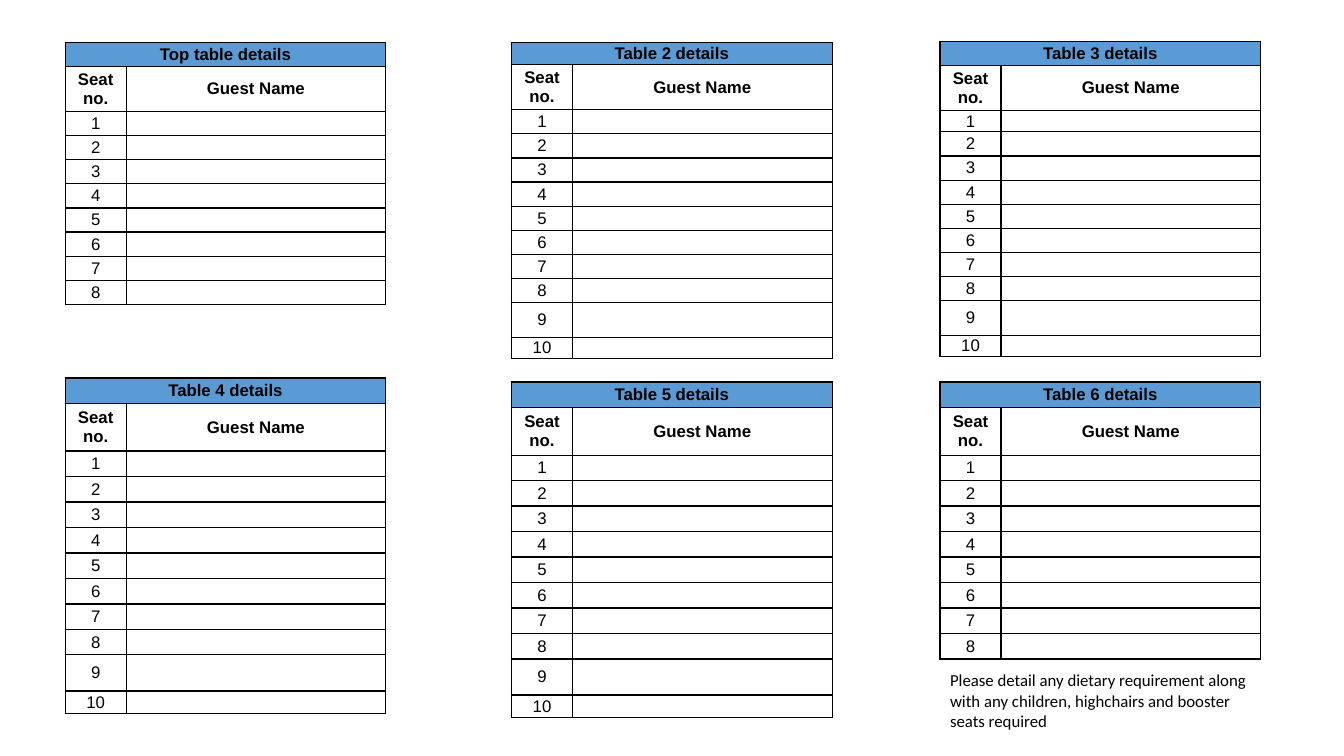
"""Build a wedding seating plan slide with six guest tables."""
from dataclasses import dataclass, replace

from lxml import etree
from pptx import Presentation
from pptx.dml.color import RGBColor
from pptx.enum import text as text_enum
from pptx.oxml import ns
from pptx.shapes.shapetree import SlideShapes
from pptx.table import _Cell
from pptx.text.text import TextFrame
from pptx.util import Pt


@dataclass(frozen=True)
class Theme:
    ink: str = "000000"
    title_fill: str = "5B9BD5"
    table_font: str = "Arial"
    note_font: str = "Calibri"
    size: float = 12
    border: float = 1


@dataclass(frozen=True)
class RowHeights:
    title: float
    header: float
    first: float
    seat: float
    ninth: float
    tenth: float

    def for_seats(self, seats: int) -> list[float]:
        seat_rows = [self.first, *[self.seat] * 7, self.ninth, self.tenth]
        return [self.title, self.header, *seat_rows[:seats]]


@dataclass(frozen=True)
class GuestTable:
    title: str
    left: float
    top: float
    seats: int
    heights: RowHeights


THEME = Theme()
COLUMN_WIDTHS = (43.5, 185.5)
LEFT, MIDDLE, RIGHT = 46.6, 365.4, 671.5
UPPER = RowHeights(17.25, 32.2, 17.25, 17.25, 24.7, 15.3)
LOWER = RowHeights(18.2, 34, 18.2, 18.2, 25.8, 16.1)
GUEST_TABLES = (
    GuestTable("Top table details", LEFT, 30.2, 8, UPPER),
    GuestTable("Table 4 details", LEFT, 270, 10, LOWER),
    GuestTable("Table 5 details", MIDDLE, 272.9, 10, LOWER),
    GuestTable("Table 2 details", MIDDLE, 30.2, 10, replace(UPPER, title=16)),
    GuestTable("Table 6 details", RIGHT, 272.9, 8, LOWER),
    GuestTable("Table 3 details", RIGHT, 29.5, 10, replace(UPPER, first=15.3)),
)
NOTE = ("Please detail any dietary requirement along with any children, "
        "highchairs and booster seats required")


def write_text(frame: TextFrame, content: str, *, font: str, bold: bool = False,
               align: text_enum.PP_ALIGN = text_enum.PP_ALIGN.LEFT) -> None:
    paragraph = frame.paragraphs[0]
    paragraph.alignment = align
    if not content:
        end = etree.SubElement(paragraph._p, ns.qn("a:endParaRPr"))
        end.set("sz", str(int(THEME.size * 100)))
        return
    run = paragraph.add_run()
    run.text = content
    run.font.name = font
    run.font.size = Pt(THEME.size)
    run.font.bold = bold
    run.font.color.rgb = RGBColor.from_string(THEME.ink)


def draw_borders(cell: _Cell) -> None:
    properties = cell._tc.get_or_add_tcPr()
    for side in ("lnL", "lnR", "lnT", "lnB"):
        line = etree.SubElement(properties, ns.qn(f"a:{side}"), w=str(Pt(THEME.border)))
        fill = etree.SubElement(line, ns.qn("a:solidFill"))
        etree.SubElement(fill, ns.qn("a:srgbClr"), val=THEME.ink)


def format_cell(cell: _Cell, content: str, *, bold: bool, fill: str | None) -> None:
    cell.margin_left = cell.margin_right = cell.margin_top = cell.margin_bottom = Pt(0)
    cell.vertical_anchor = text_enum.MSO_ANCHOR.MIDDLE
    draw_borders(cell)
    if fill:
        cell.fill.solid()
        cell.fill.fore_color.rgb = RGBColor.from_string(fill)
    else:
        cell.fill.background()
    write_text(cell.text_frame, content, font=THEME.table_font, bold=bold,
               align=text_enum.PP_ALIGN.CENTER)


def draw_guest_table(shapes: SlideShapes, guest_table: GuestTable) -> None:
    heights = guest_table.heights.for_seats(guest_table.seats)
    shape = shapes.add_table(len(heights), len(COLUMN_WIDTHS), Pt(guest_table.left),
                             Pt(guest_table.top), Pt(sum(COLUMN_WIDTHS)), Pt(sum(heights)))
    table = shape.table
    table.first_row = table.horz_banding = False
    for column, width in zip(table.columns, COLUMN_WIDTHS):
        column.width = Pt(width)
    for row, height in zip(table.rows, heights):
        row.height = Pt(height)
    table.cell(0, 0).merge(table.cell(0, 1))

    contents = [(guest_table.title, ""), ("Seat no.", "Guest Name")]
    contents += [(str(seat), "") for seat in range(1, guest_table.seats + 1)]
    for row_index, row_contents in enumerate(contents):
        for column_index, content in enumerate(row_contents):
            format_cell(table.cell(row_index, column_index), content, bold=row_index < 2,
                        fill=THEME.title_fill if row_index == 0 else None)


def draw_note(shapes: SlideShapes) -> None:
    frame = shapes.add_textbox(Pt(RIGHT), Pt(475.2), Pt(229), Pt(67.7)).text_frame
    frame.word_wrap = True
    frame.auto_size = text_enum.MSO_AUTO_SIZE.SHAPE_TO_FIT_TEXT
    write_text(frame, NOTE, font=THEME.note_font)


def main() -> None:
    presentation = Presentation()
    presentation.slide_width, presentation.slide_height = Pt(960), Pt(540)
    slide = presentation.slides.add_slide(presentation.slide_layouts[6])
    for guest_table in GUEST_TABLES:
        draw_guest_table(slide.shapes, guest_table)
    draw_note(slide.shapes)
    presentation.save("out.pptx")


if __name__ == "__main__":
    main()
